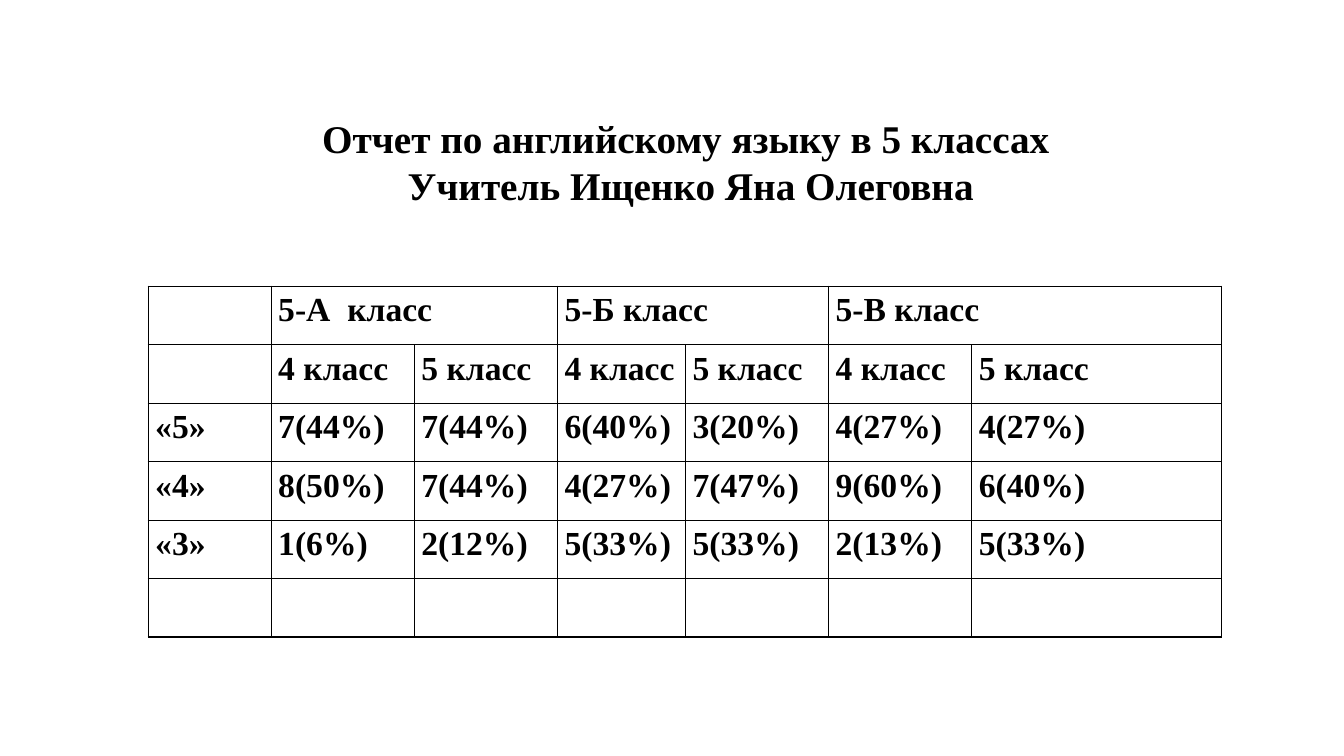
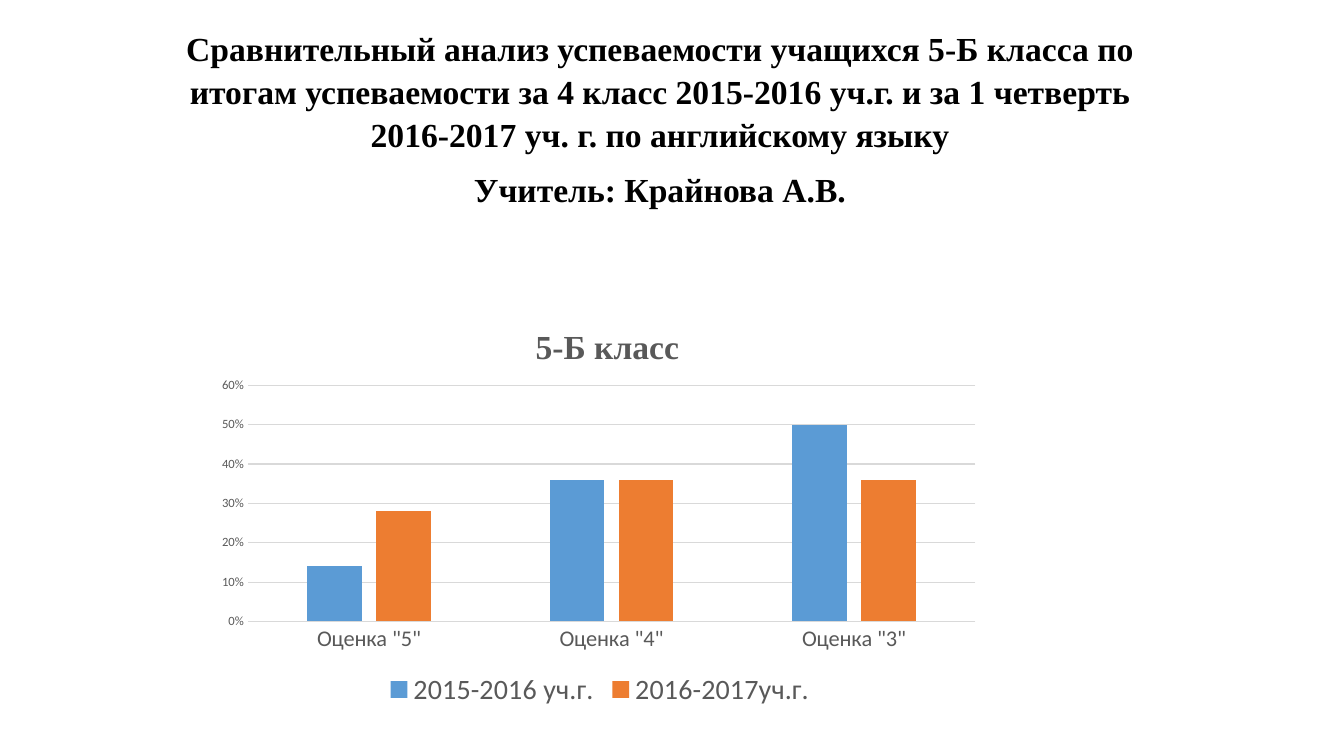
from lxml import etree
from pptx import Presentation
from pptx.chart.data import CategoryChartData
from pptx.dml.color import RGBColor
from pptx.enum.chart import XL_CHART_TYPE, XL_LEGEND_POSITION, XL_TICK_MARK
from pptx.enum.text import MSO_ANCHOR, MSO_AUTO_SIZE, PP_ALIGN
from pptx.oxml import parse_xml
from pptx.oxml.ns import nsdecls, qn
from pptx.util import Pt

PX = 9144  # 100 px to the inch

BLACK = RGBColor(0x00, 0x00, 0x00)
GRAY = RGBColor(0x59, 0x59, 0x59)
GRID = RGBColor(0xD9, 0xD9, 0xD9)
BLUE = RGBColor(0x5B, 0x9B, 0xD5)
ORANGE = RGBColor(0xED, 0x7D, 0x31)

SERIF, SANS = "Times New Roman", "Calibri"


def set_font(font, color, **fmt):
    for name, value in fmt.items():
        setattr(font, name, value)
    font.color.rgb = color


def add_title_slide(lines, box, size, **spacing):
    slide = prs.slides.add_slide(prs.slide_layouts[5])
    sp = slide.shapes.title
    sp.left, sp.top, sp.width, sp.height = [v * PX for v in box]
    tf = sp.text_frame
    tf.word_wrap = True
    tf.auto_size = MSO_AUTO_SIZE.NONE
    tf.vertical_anchor = MSO_ANCHOR.TOP
    tf.text = "\n".join(lines)
    for p in tf.paragraphs:
        p.alignment = PP_ALIGN.CENTER
        for name, value in spacing.items():
            setattr(p, name, value)
        set_font(p.runs[0].font, BLACK, name=SERIF, size=size, bold=True)
    return slide


prs = Presentation()
prs.slide_width, prs.slide_height = 1333 * PX, 750 * PX

# Slide 1: table of marks
slide = add_title_slide(
    ["Отчет по английскому языку в 5 классах ", "Учитель Ищенко Яна Олеговна"],
    (275, 108, 820, 104), Pt(28))

rows = [
    ["", "5-А  класс", "", "5-Б класс", "", "5-В класс", ""],
    [""] + ["4 класс", "5 класс"] * 3,
    ["«5»", "7(44%)", "7(44%)", "6(40%)", "3(20%)", "4(27%)", "4(27%)"],
    ["«4»", "8(50%)", "7(44%)", "4(27%)", "7(47%)", "9(60%)", "6(40%)"],
    ["«3»", "1(6%)", "2(12%)", "5(33%)", "5(33%)", "2(13%)", "5(33%)"],
    [""] * 7,
]
widths = [122, 142, 142, 127, 142, 142, 248]
row_height = 58
table = slide.shapes.add_table(
    len(rows), len(widths), 147 * PX, 284 * PX,
    sum(widths) * PX, row_height * len(rows) * PX).table
table.first_row = table.horz_banding = False
for col, width in zip(table.columns, widths):
    col.width = width * PX
for row in table.rows:
    row.height = row_height * PX
for c in (1, 3, 5):
    table.cell(0, c).merge(table.cell(0, c + 1))

for r, texts in enumerate(rows):
    for c, text in enumerate(texts):
        cell = table.cell(r, c)
        cell.fill.background()
        cell.margin_left = cell.margin_right = 7 * PX
        cell.margin_top = cell.margin_bottom = 0
        if text:
            cell.text = text
            p = cell.text_frame.paragraphs[0]
            p.line_spacing = 1.15
            set_font(p.runs[0].font, BLACK, name=SERIF, size=Pt(24), bold=True)
        # Cell borders
        tcPr = cell._tc.get_or_add_tcPr()
        for i, side in enumerate(("lnL", "lnR", "lnT", "lnB")):
            tcPr.insert(i, parse_xml(
                f'<a:{side} {nsdecls("a")} w="{Pt(1)}"><a:solidFill>'
                f'<a:srgbClr val="{BLACK}"/></a:solidFill></a:{side}>'))

# Slide 2: comparison chart
slide = add_title_slide(
    ["Сравнительный анализ успеваемости учащихся 5-Б класса по итогам "
     "успеваемости за 4 класс 2015-2016 уч.г. и за 1 четверть "
     "2016-2017 уч. г. по английскому языку",
     "Учитель: Крайнова А.В."],
    (162, 20, 985, 194), Pt(24), line_spacing=1.07, space_after=Pt(8))

data = CategoryChartData(number_format="0%")
data.categories = ['Оценка "5"', 'Оценка "4"', 'Оценка "3"']
data.add_series("2015-2016 уч.г.", [0.14, 0.36, 0.5])
data.add_series("2016-2017уч.г.", [0.28, 0.36, 0.36])
chart = slide.shapes.add_chart(
    XL_CHART_TYPE.COLUMN_CLUSTERED,
    207 * PX, 296 * PX, 776 * PX, 411 * PX, data).chart
set_font(chart.font, BLACK, name=SANS, size=Pt(10))

# Chart title and legend
tf = chart.chart_title.text_frame
tf.text = "5-Б класс"
set_font(tf.paragraphs[0].runs[0].font, GRAY, name=SERIF, size=Pt(24), bold=True)
chart.chart_title.include_in_layout = False
chart.has_legend = True
chart.legend.position = XL_LEGEND_POSITION.BOTTOM
chart.legend.include_in_layout = False
set_font(chart.legend.font, GRAY, name=SANS, size=Pt(20))

# Columns
plot = chart.plots[0]
plot.gap_width, plot.overlap, plot.vary_by_categories = 219, -27, False
for series, color in zip(plot.series, (BLUE, ORANGE)):
    series.format.fill.solid()
    series.format.fill.fore_color.rgb = color

# Axes
cat_axis, val_axis = chart.category_axis, chart.value_axis
for axis, size in ((cat_axis, 16), (val_axis, 9)):
    axis.major_tick_mark = axis.minor_tick_mark = XL_TICK_MARK.NONE
    set_font(axis.tick_labels.font, GRAY, name=SANS, size=Pt(size))
val_axis.minimum_scale, val_axis.maximum_scale, val_axis.major_unit = 0, 0.6, 0.1
val_axis.tick_labels.number_format = "0%"
val_axis.tick_labels.number_format_is_linked = False
val_axis.format.line.fill.background()
for line in (cat_axis.format.line, val_axis.major_gridlines.format.line):
    line.color.rgb = GRID
    line.width = Pt(0.75)

# Fixed places of the chart title and the plot area, as shares of the chart
title_el = chart._chartSpace.chart.find(qn("c:title"))
plot_el = chart._chartSpace.chart.plotArea
for el, index, target, place in (
        (title_el, 1, None, {"x": 0.41, "y": 0.05}),
        (plot_el, 0, "inner", {"x": 0.05, "y": 0.21, "w": 0.93, "h": 0.57})):
    for old in el.findall(qn("c:layout")):
        el.remove(old)
    layout = etree.Element(qn("c:layout"))
    manual = etree.SubElement(layout, qn("c:manualLayout"))
    if target:
        etree.SubElement(manual, qn("c:layoutTarget"), val=target)
    for tag in ("xMode", "yMode"):
        etree.SubElement(manual, qn(f"c:{tag}"), val="edge")
    for tag, value in place.items():
        etree.SubElement(manual, qn(f"c:{tag}"), val=str(value))
    el.insert(index, layout)

prs.save("out.pptx")
